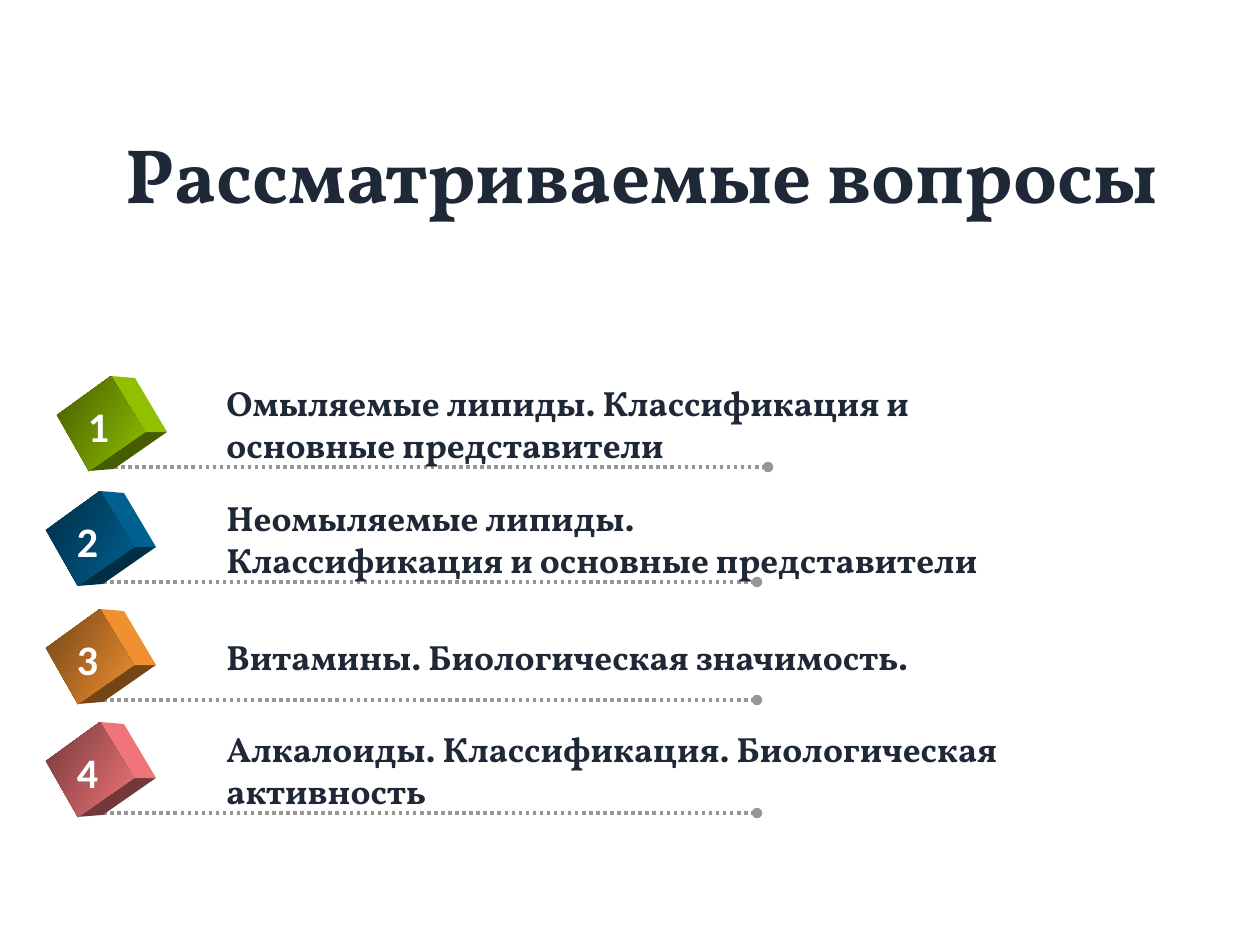
"""Build the slide listing the four topics to be discussed."""
from dataclasses import dataclass

from lxml import etree
from pptx import Presentation
from pptx.dml.color import RGBColor
from pptx.enum.dml import MSO_LINE
from pptx.enum.shapes import MSO_CONNECTOR
from pptx.enum.text import MSO_ANCHOR, PP_ALIGN
from pptx.oxml.ns import qn
from pptx.util import Pt

PX = 914400 / 126
STRAIGHT = MSO_CONNECTOR.STRAIGHT
DOTS = MSO_LINE.ROUND_DOT
MIDDLE = MSO_ANCHOR.MIDDLE
LEFT, CENTER = PP_ALIGN.LEFT, PP_ALIGN.CENTER

INK = RGBColor(0x1F, 0x28, 0x37)
GRAY = RGBColor(0x96, 0x96, 0x96)
WHITE = RGBColor(0xFF, 0xFF, 0xFF)
GREEN = RGBColor(0x99, 0xCC, 0x00)
BLUE = RGBColor(0x00, 0x66, 0x99)
ORANGE = RGBColor(0xFF, 0x99, 0x33)
PINK = RGBColor(0xFF, 0x7C, 0x80)

FRONT = [(0, 39), (54, 0), (88, 56), (32, 95)]
SIDE = [(54, 0), (78, 2), (110, 56), (88, 56)]
BASE = [(88, 56), (110, 56), (57, 93), (32, 95)]
DARK, LIGHT = 0.45, 0.94


@dataclass
class Topic:
    """A numbered topic with the top left corner of its cube."""
    number: int
    x: int
    y: int
    color: RGBColor
    text: str


TOPICS = [
    Topic(1, 57, 376, GREEN, "Омыляемые липиды. Классификация и\nосновные представители"),
    Topic(2, 46, 491, BLUE, "Неомыляемые липиды.\nКлассификация и основные представители"),
    Topic(3, 46, 609, ORANGE, "Витамины. Биологическая значимость."),
    Topic(4, 46, 722, PINK, "Алкалоиды. Классификация. Биологическая\nактивность"),
]


def px(n: int) -> int:
    """Convert pixels to EMU."""
    return round(n * PX)


def shade(color: RGBColor, factor: float) -> RGBColor:
    """Return the colour darkened by a factor."""
    return RGBColor(*(round(c * factor) for c in color))


def set_text(sp, text: str, font: str, size: int, color: RGBColor, align) -> None:
    """Fill a shape with bold text, one paragraph per line."""
    tf = sp.text_frame
    tf.word_wrap = True
    tf.vertical_anchor = MIDDLE
    tf.text = text
    for p in tf.paragraphs:
        p.alignment = align
        for r in p.runs:
            r.font.name = font
            r.font.size = Pt(size)
            r.font.bold = True
            r.font.color.rgb = color


def add_text(s, x: int, y: int, w: int, h: int, *style) -> None:
    """Add a text box with the given text and style."""
    set_text(s.shapes.add_textbox(px(x), px(y), px(w), px(h)), *style)


def add_rule(s, x: int, y: int, w: int) -> None:
    """Add a dotted line ending in a round dot."""
    line = s.shapes.add_connector(STRAIGHT, px(x), px(y), px(x + w), px(y))
    line.line.color.rgb = GRAY
    line.line.width = Pt(2)
    line.line.dash_style = DOTS
    etree.SubElement(line.line._get_or_add_ln(), qn("a:tailEnd"), type="oval")
    etree.SubElement(line._element.spPr, qn("a:effectLst"))


def add_face(s, topic: Topic, points: list[tuple[int, int]]):
    """Add one outlined face of a cube and return it."""
    pts = [(topic.x + dx, topic.y + dy) for dx, dy in points]
    builder = s.shapes.build_freeform(*pts[0], scale=PX)
    builder.add_line_segments(pts[1:], close=True)
    sp = builder.convert_to_shape()
    sp.shadow.inherit = False
    sp.line.fill.background()
    return sp


def add_cube(s, topic: Topic) -> None:
    """Add a tilted cube made of three faces."""
    for points, factor in ((BASE, DARK), (SIDE, LIGHT)):
        fill = add_face(s, topic, points).fill
        fill.solid()
        fill.fore_color.rgb = shade(topic.color, factor)
    fill = add_face(s, topic, FRONT).fill
    fill.gradient()
    fill.gradient_angle = 330
    for stop, position, factor in zip(fill.gradient_stops, (0, 1), (DARK, LIGHT)):
        stop.position = position
        stop.color.rgb = shade(topic.color, factor)


def add_topic(s, topic: Topic) -> None:
    """Add the rule, cube, wording and number of a topic."""
    add_rule(s, topic.x + 50, topic.y + 91, 661)
    add_cube(s, topic)
    add_text(s, 214, topic.y - 1, 840, 97, topic.text, "Vollkorn", 20, INK, LEFT)
    add_text(s, topic.x + 17, topic.y + 18, 49, 63, str(topic.number),
             "Calibri", 24, WHITE, CENTER)


def main() -> None:
    """Build and save the slide."""
    prs = Presentation()
    prs.slide_width, prs.slide_height = px(1260), px(945)
    s = prs.slides.add_slide(prs.slide_layouts[5])
    title = s.shapes.title
    title.left, title.top, title.width, title.height = map(px, (113, 118, 1086, 122))
    set_text(title, "Рассматриваемые вопросы", "Vollkorn", 44, INK, LEFT)
    title.text_frame.paragraphs[0].line_spacing = 0.9
    for topic in TOPICS:
        add_topic(s, topic)
    prs.save("out.pptx")


if __name__ == "__main__":
    main()
